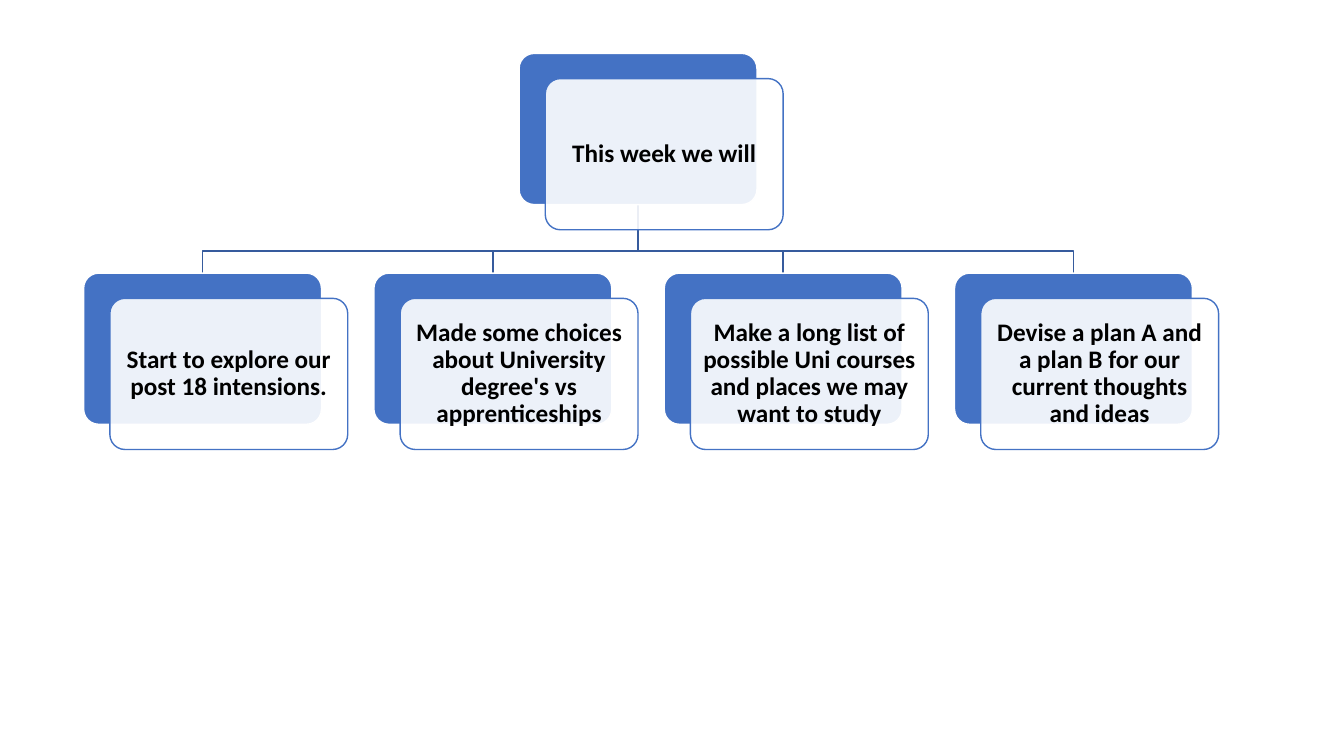
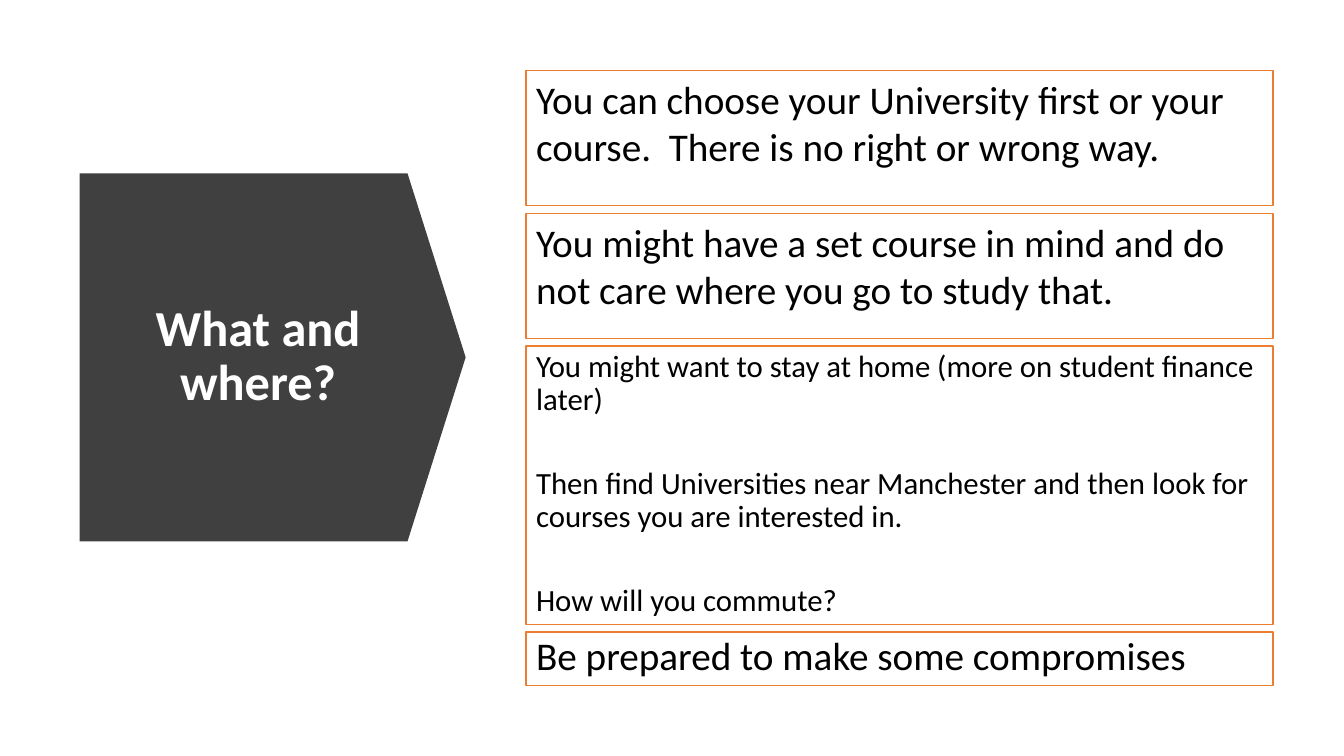
from dataclasses import dataclass

from lxml.etree import SubElement
from pptx import Presentation
from pptx.dml.color import RGBColor
from pptx.enum.shapes import MSO_SHAPE
from pptx.enum.text import MSO_ANCHOR, PP_ALIGN
from pptx.oxml.ns import qn
from pptx.util import Inches, Pt


@dataclass(frozen=True)
class Theme:
    font: str = "Calibri"
    white: str = "FFFFFF"
    black: str = "000000"
    blue: str = "4472C4"
    link: str = "365B9D"
    orange: str = "ED7D31"
    dark: str = "404040"
    title: int = 36
    large: int = 28
    medium: int = 22
    small: int = 18
    line: int = 1


def rgb(value):
    return RGBColor.from_string(value)


def write(sp, text, theme, size, color=None, bold=False, align=PP_ALIGN.LEFT,
          anchor=MSO_ANCHOR.TOP, spacing=1.0, gap=0, inset=(0.1, 0.05)):
    tf = sp.text_frame
    tf.word_wrap = True
    tf.vertical_anchor = anchor
    tf.margin_left = tf.margin_right = Inches(inset[0])
    tf.margin_top = tf.margin_bottom = Inches(inset[1])
    for i, line in enumerate(text.split("\n")):
        p = tf.add_paragraph() if i else tf.paragraphs[0]
        p.alignment = align
        p.line_spacing = spacing
        p.space_before = Pt(gap if i else 0)
        r = p.add_run()
        r.text = line
        r.font.name = theme.font
        r.font.size = Pt(size)
        r.font.bold = bold
        r.font.color.rgb = rgb(color or theme.black)


class Deck:
    card_w, card_h, card_shift = 2.36, 1.5, (0.26, 0.25)

    def __init__(self, theme):
        self.theme = theme
        self.prs = Presentation()
        self.prs.slide_width = Inches(40 / 3)
        self.prs.slide_height = Inches(7.5)
        self.slide = None

    def new_slide(self):
        self.slide = self.prs.slides.add_slide(self.prs.slide_layouts[6])

    def outline(self, sp, color):
        sp.line.color.rgb = rgb(color)
        sp.line.width = Pt(self.theme.line)

    def shape(self, kind, x, y, w, h, fill, line=None, adj=None, alpha=None):
        sp = self.slide.shapes.add_shape(
            kind, Inches(x), Inches(y), Inches(w), Inches(h))
        sp.shadow.inherit = False
        sp.fill.solid()
        sp.fill.fore_color.rgb = rgb(fill)
        if alpha is not None:
            color = sp.fill._xPr.find(qn("a:solidFill"))[0]
            SubElement(color, qn("a:alpha")).set("val", str(alpha * 1000))
        if line:
            self.outline(sp, line)
        else:
            sp.line.fill.background()
        if adj is not None:
            sp.adjustments[0] = adj
        return sp

    def branch(self, *points):
        start, *rest = [(Inches(x), Inches(y)) for x, y in points]
        builder = self.slide.shapes.build_freeform(*start)
        builder.add_line_segments(rest, close=False)
        sp = builder.convert_to_shape()
        sp.shadow.inherit = False
        sp.fill.background()
        self.outline(sp, self.theme.link)

    def card(self, x, y, text):
        t = self.theme
        dx, dy = self.card_shift
        size = self.card_w, self.card_h
        self.shape(MSO_SHAPE.ROUNDED_RECTANGLE, x, y, *size, t.blue, t.white, 0.1)
        front = self.shape(MSO_SHAPE.ROUNDED_RECTANGLE, x + dx, y + dy, *size,
                           t.white, t.blue, 0.1, alpha=90)
        write(front, text, t, t.small, bold=True, align=PP_ALIGN.CENTER,
              anchor=MSO_ANCHOR.MIDDLE, spacing=0.9, inset=(0.07, 0.07))

    def tree(self, root, children, left, top, child_top, pitch, bar_y):
        half = self.card_w / 2
        xs = [left + i * pitch for i in range(len(children))]
        root_x = (xs[0] + xs[-1]) / 2
        stem = root_x + half
        for x in reversed(xs):
            self.branch((stem, top + self.card_h), (stem, bar_y),
                        (x + half, bar_y), (x + half, child_top))
        self.card(root_x, top, root)
        for x, text in zip(xs, children):
            self.card(x, child_top, text)

    def arrow_title(self, text, x, y, w, h):
        t = self.theme
        sp = self.shape(MSO_SHAPE.PENTAGON, x, y, w, h, t.dark, adj=0.158)
        write(sp, text, t, t.title, color=t.white, bold=True, spacing=0.9,
              align=PP_ALIGN.CENTER, anchor=MSO_ANCHOR.MIDDLE, inset=(0.43, 0.05))

    def boxes(self, rows, x, y, w, h):
        t = self.theme
        gap = (h - sum(row[0] for row in rows)) / (len(rows) - 1)
        for row_h, size, spacing, text in rows:
            sp = self.shape(MSO_SHAPE.RECTANGLE, x, y, w, row_h, t.white, t.orange)
            write(sp, text, t, size, spacing=spacing, gap=36)
            y += row_h + gap


def main():
    theme = Theme()
    deck = Deck(theme)

    deck.new_slide()
    deck.tree(
        "This week we will",
        ["Start to explore our post 18 intensions.",
         "Made some choices about University degree's vs apprenticeships",
         "Make a long list of possible Uni courses and places we may want to study",
         "Devise a plan A and a plan B for our current thoughts and ideas"],
        left=0.83, top=0.53, child_top=2.71, pitch=2.88, bar_y=2.49)

    deck.new_slide()
    deck.arrow_title("What and where?", 0.79, 1.72, 3.83, 3.65)
    deck.boxes(
        [(1.34, theme.large, 1.0,
          "You can choose your University first or your course.  "
          "There is no right or wrong way."),
         (1.24, theme.large, 1.0,
          "You might have a set course in mind and do not care where you go "
          "to study that."),
         (2.76, theme.medium, 0.9,
          "You might want to stay at home (more on student finance later)\n"
          "Then find Universities near Manchester and then look for courses "
          "you are interested in.\n"
          "How will you commute?"),
         (0.53, theme.large, 0.9, "Be prepared to make some compromises")],
        x=5.22, y=0.7, w=7.41, h=6.1)

    deck.prs.save("out.pptx")


if __name__ == "__main__":
    main()
